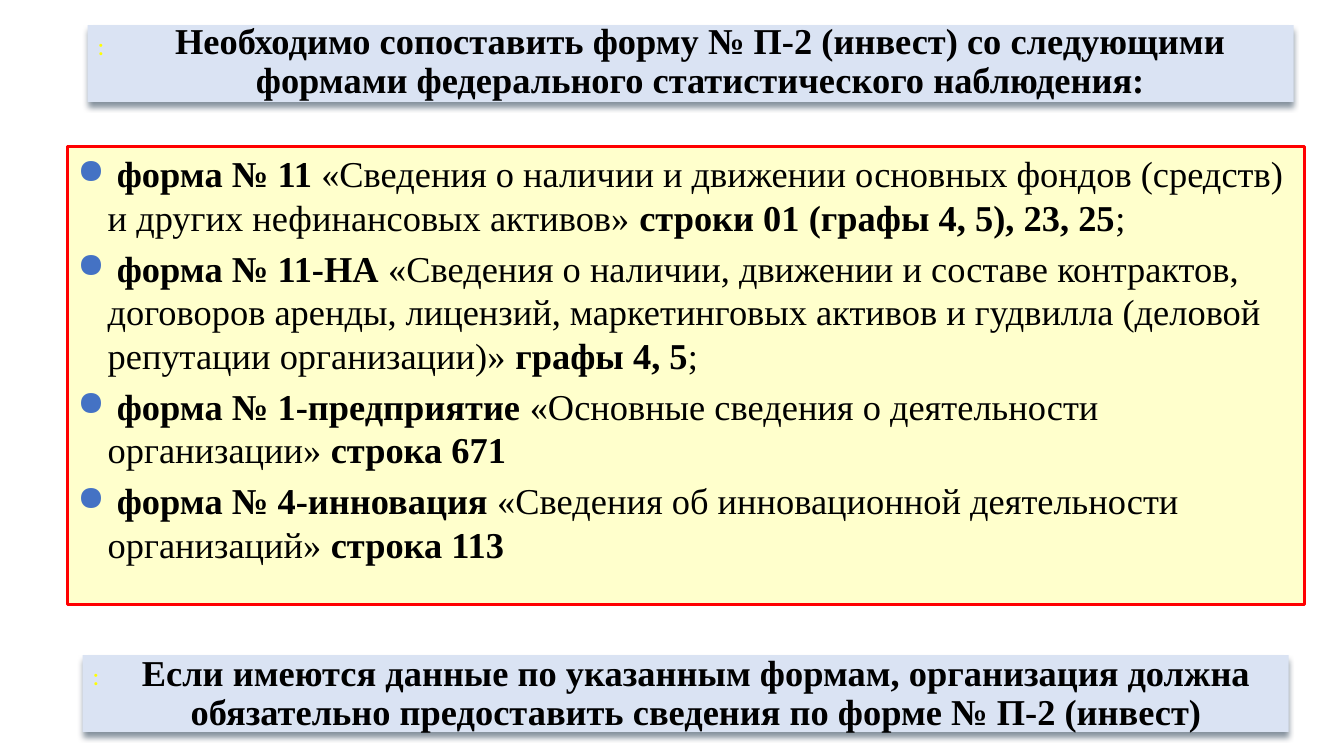
from lxml import etree
from pptx import Presentation
from pptx.dml.color import RGBColor
from pptx.enum import shapes, text
from pptx.oxml import ns, parse_xml
from pptx.util import Inches, Pt

COLORS = {
    "banner": "DAE3F3", "shadow": "031D35", "mark": "FFFF00",
    "panel": "FFFFCC", "border": "FF0000", "bullet": "4472C4", "text": "000000",
}
FONT = "Times New Roman"
SIZE = 26
TITLE = ("Необходимо сопоставить форму № П-2 (инвест) со следующими "
         "формами федерального статистического наблюдения:")
CONCLUSION = ("Если имеются данные по указанным формам, организация должна "
              "обязательно предоставить сведения по форме № П-2 (инвест)")
# Form, its name, the lines to compare, closing mark
FORMS = [
    ("форма № 11", "«Сведения о наличии и движении основных фондов (средств) "
     "и других нефинансовых активов»", "строки 01 (графы 4, 5), 23, 25", ";"),
    ("форма № 11-НА", "«Сведения о наличии, движении и составе контрактов, "
     "договоров аренды, лицензий, маркетинговых активов и гудвилла (деловой "
     "репутации организации)»", "графы 4, 5", ";"),
    ("форма № 1-предприятие", "«Основные сведения о деятельности организации»",
     "строка 671", ""),
    ("форма № 4-инновация", "«Сведения об инновационной деятельности организаций»",
     "строка 113", ""),
]


def color(name):
    return RGBColor.from_string(COLORS[name])


def set_font(font, name, size, color_name, bold=None):
    font.name, font.size, font.bold = name, Pt(size), bold
    font.color.rgb = color(color_name)


def place(shape, left, top, width, height):
    shape.left, shape.top = Inches(left), Inches(top)
    shape.width, shape.height = Inches(width), Inches(height)


def add_shadow(shape):
    shape.shadow.inherit = False
    effects = shape._element.spPr.find(ns.qn("a:effectLst"))
    effects.append(parse_xml(
        f'<a:outerShdw {ns.nsdecls("a")} blurRad="{Pt(4.5)}" dist="{Pt(3)}" '
        'dir="5400000" algn="ctr" rotWithShape="0">'
        f'<a:srgbClr val="{COLORS["shadow"]}"><a:alpha val="48000"/></a:srgbClr>'
        '</a:outerShdw>'))


def add_banner(s, left, top):
    """Pale bar with a shadow and a small yellow mark."""
    sp = s.shapes.add_shape(shapes.MSO_SHAPE.ROUNDED_RECTANGLE, Inches(left),
                            Inches(top), Inches(11.96), Inches(0.76))
    sp.adjustments[0] = 0
    sp.fill.solid()
    sp.fill.fore_color.rgb = color("banner")
    sp.line.fill.background()
    add_shadow(sp)
    tf = sp.text_frame
    tf.vertical_anchor = text.MSO_ANCHOR.TOP
    p = tf.paragraphs[0]
    p.text = ":"
    p.alignment = text.PP_ALIGN.LEFT
    set_font(p.font, "Calibri", 18, "mark")
    return sp


def write_heading(sp, words):
    tf = sp.text_frame
    tf.word_wrap = True
    tf.auto_size = text.MSO_AUTO_SIZE.NONE
    tf.vertical_anchor = text.MSO_ANCHOR.MIDDLE
    tf.margin_left = tf.margin_right = Inches(0.05)
    tf.margin_top = tf.margin_bottom = Inches(0.04)
    p = tf.paragraphs[0]
    p.text = words
    p.alignment = text.PP_ALIGN.CENTER
    p.line_spacing = 0.9
    p.space_before = Pt(0)
    set_font(p.font, FONT, SIZE, "text", True)


def set_bullet(p):
    pPr = p._p.get_or_add_pPr()
    pPr.set("marL", str(Inches(0.3)))
    pPr.set("indent", str(-Inches(0.3)))
    bullet_color = etree.Element(ns.qn("a:buClr"))
    etree.SubElement(bullet_color, ns.qn("a:srgbClr"), val=COLORS["bullet"])
    parts = [bullet_color,
             etree.Element(ns.qn("a:buSzPct"), val="95000"),
             etree.Element(ns.qn("a:buChar"), char="●")]
    # Bullet settings stand before the default run properties
    for part in parts:
        pPr.find(ns.qn("a:defRPr")).addprevious(part)


def add_forms_panel(s):
    sp = s.shapes.add_shape(shapes.MSO_SHAPE.RECTANGLE, Inches(0.67),
                            Inches(1.45), Inches(12.27), Inches(4.55))
    sp.shadow.inherit = False
    sp.fill.solid()
    sp.fill.fore_color.rgb = color("panel")
    sp.line.color.rgb = color("border")
    sp.line.width = Pt(2)
    tf = sp.text_frame
    tf.word_wrap = True
    tf.vertical_anchor = text.MSO_ANCHOR.TOP
    for i, (form, name, rows, end) in enumerate(FORMS):
        p = tf.add_paragraph() if i else tf.paragraphs[0]
        p.alignment = text.PP_ALIGN.LEFT
        p.space_before = Pt(0.2 * SIZE)
        set_font(p.font, FONT, SIZE, "text")
        set_bullet(p)
        runs = [(f" {form} ", True), (f"{name} ", False), (rows, True), (end, False)]
        for words, bold in runs:
            if words:
                r = p.add_run()
                r.text = words
                set_font(r.font, FONT, SIZE, "text", bold)


def main():
    prs = Presentation()
    prs.slide_width, prs.slide_height = Inches(13.33), Inches(7.5)
    s = prs.slides.add_slide(prs.slide_layouts[5])

    # Title on its banner
    banner = add_banner(s, 0.87, 0.25)
    title = s.shapes.title
    place(title, 1.42, 0.13, 11.06, 0.98)
    write_heading(title, TITLE)
    banner._element.addnext(title._element)

    # Forms to compare
    add_forms_panel(s)

    # Conclusion
    add_banner(s, 0.82, 6.5)
    box = s.shapes.add_textbox(Inches(0.98), Inches(6.62), Inches(11.86), Inches(0.53))
    write_heading(box, CONCLUSION)

    prs.save("out.pptx")


if __name__ == "__main__":
    main()
